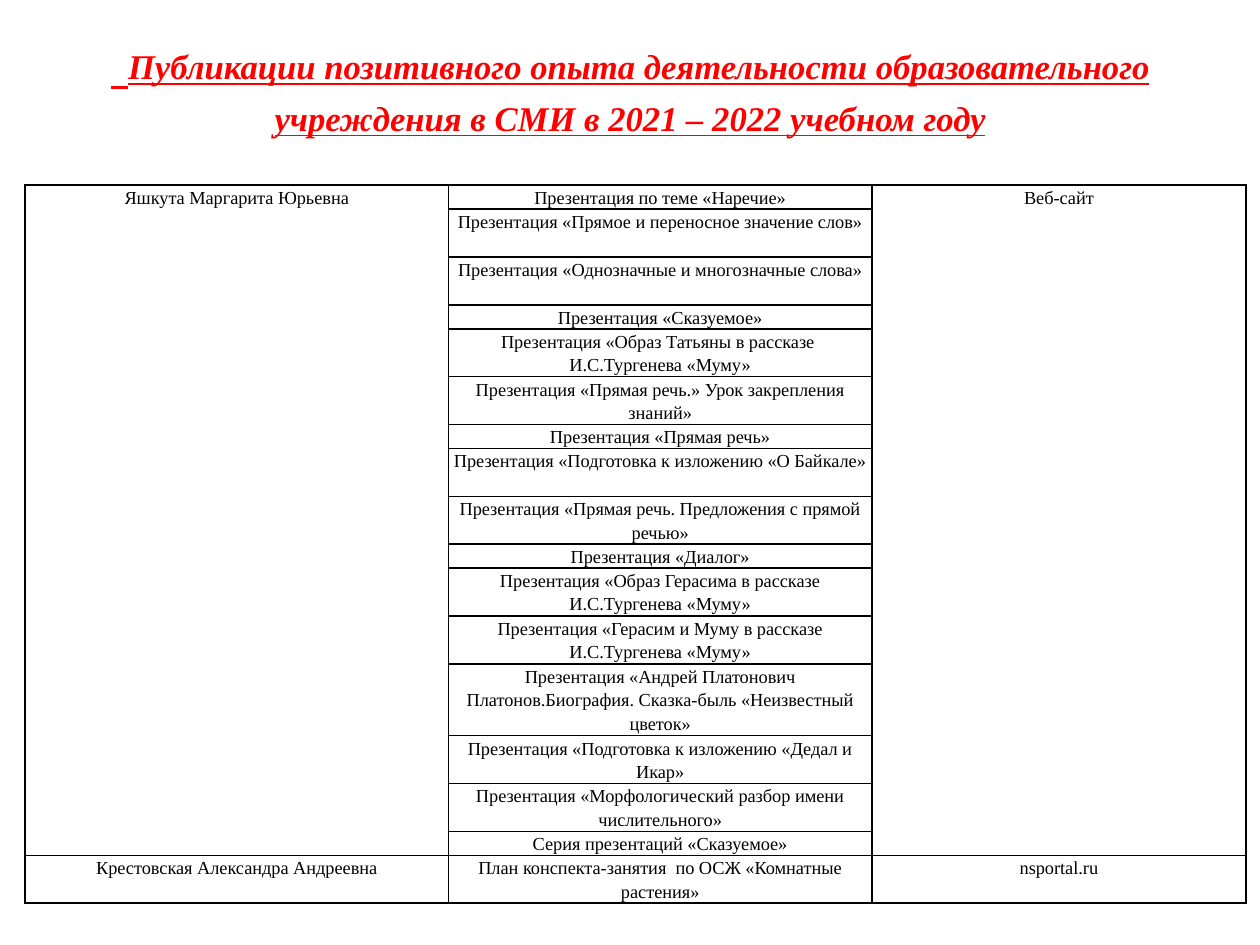
from lxml import etree
from pptx import Presentation
from pptx.dml.color import RGBColor
from pptx.enum import text
from pptx.oxml import ns
from pptx.util import Inches, Pt

# Content
TITLE = ("Публикации позитивного опыта деятельности образовательного "
         "учреждения в СМИ в 2021 – 2022 учебном году")
# Each author: name, site, and publications with their height in text lines
AUTHORS = [
    ("Яшкута Маргарита Юрьевна", "Веб-сайт", [
        ("Презентация по теме «Наречие»", 1),
        ("Презентация «Прямое и переносное значение слов»", 2),
        ("Презентация «Однозначные и многозначные слова»", 2),
        ("Презентация «Сказуемое»", 1),
        ("Презентация «Образ Татьяны в рассказе  И.С.Тургенева «Муму»", 2),
        ("Презентация «Прямая речь.» Урок закрепления знаний»", 2),
        ("Презентация «Прямая речь»", 1),
        ("Презентация «Подготовка к изложению «О Байкале»", 2),
        ("Презентация «Прямая речь. Предложения с прямой речью»", 2),
        ("Презентация «Диалог»", 1),
        ("Презентация «Образ Герасима в рассказе И.С.Тургенева «Муму»", 2),
        ("Презентация «Герасим и Муму в рассказе И.С.Тургенева «Муму»", 2),
        ("Презентация «Андрей Платонович Платонов.Биография. "
         "Сказка-быль «Неизвестный цветок»", 3),
        ("Презентация «Подготовка к изложению «Дедал и Икар»", 2),
        ("Презентация «Морфологический разбор имени числительного»", 2),
        ("Серия презентаций «Сказуемое»", 1),
    ]),
    ("Крестовская Александра Андреевна", "nsportal.ru", [
        ("План конспекта-занятия  по ОСЖ «Комнатные растения»", 2),
    ]),
]

THEME = {
    "font": "Times New Roman",
    "title": "FF0000", "text": "000000", "border": "000000",
    "lead_size": 39.6, "title_size": 19.8, "cell_size": 10.5,
}
COLUMNS = [3.36, 3.36, 2.97]
LINE_HEIGHT = 0.19


def write(paragraph, content, size, color, spacing, strong=False):
    """Add a centred run in the theme font."""
    paragraph.alignment = text.PP_ALIGN.CENTER
    paragraph.line_spacing = spacing
    run = paragraph.add_run()
    run.text = content
    font = run.font
    font.name, font.size = THEME["font"], Pt(size)
    font.color.rgb = RGBColor.from_string(THEME[color])
    font.bold = font.italic = font.underline = strong


def set_borders(cell):
    properties = cell._tc.get_or_add_tcPr()
    for position, side in enumerate(("lnL", "lnR", "lnT", "lnB")):
        line = etree.Element(ns.qn("a:" + side), w=str(Pt(1)))
        fill = etree.SubElement(line, ns.qn("a:solidFill"))
        etree.SubElement(fill, ns.qn("a:srgbClr"), val=THEME["border"])
        properties.insert(position, line)


def add_title(slide):
    title = slide.shapes.title
    title.left, title.top = Inches(0.5), Inches(0.3)
    title.width, title.height = Inches(9), Inches(1.25)
    frame = title.text_frame
    frame.word_wrap = True
    frame.auto_size = text.MSO_AUTO_SIZE.NONE
    frame.vertical_anchor = text.MSO_ANCHOR.BOTTOM
    frame.margin_top, frame.margin_bottom = 0, Inches(0.45)
    paragraph = frame.paragraphs[0]
    for content, size in ((" ", "lead_size"), (TITLE, "title_size")):
        write(paragraph, content, THEME[size], "title", 1.08, strong=True)


def add_publications(slide):
    heights = [lines * LINE_HEIGHT for _, _, works in AUTHORS for _, lines in works]
    table = slide.shapes.add_table(
        len(heights), len(COLUMNS), Inches(0.2), Inches(1.47),
        Inches(sum(COLUMNS)), Inches(sum(heights))).table
    table.first_row = table.horz_banding = False
    for column, width in zip(table.columns, COLUMNS):
        column.width = Inches(width)
    for row, height in zip(table.rows, heights):
        row.height = Inches(height)

    # Plain bordered cells
    for cell in table.iter_cells():
        cell.margin_left = cell.margin_right = Inches(0.04)
        cell.margin_top = cell.margin_bottom = 0
        cell.fill.background()
        set_borders(cell)
        cell.text_frame.paragraphs[0].font.size = Pt(THEME["cell_size"])

    # Author and site span all of the author's publications
    first = 0
    for name, site, works in AUTHORS:
        last = first + len(works) - 1
        entries = [(first, 0, name), (first, 2, site)]
        entries += [(first + i, 1, work) for i, (work, _) in enumerate(works)]
        for row, column, content in entries:
            paragraph = table.cell(row, column).text_frame.paragraphs[0]
            write(paragraph, content, THEME["cell_size"], "text", 1.15)
        if last > first:
            for column in (0, 2):
                table.cell(first, column).merge(table.cell(last, column))
        first = last + 1


def main():
    presentation = Presentation()
    presentation.slide_width, presentation.slide_height = Inches(10), Inches(7.5)
    slide = presentation.slides.add_slide(presentation.slide_layouts[5])
    add_title(slide)
    add_publications(slide)
    presentation.save("out.pptx")


if __name__ == "__main__":
    main()
